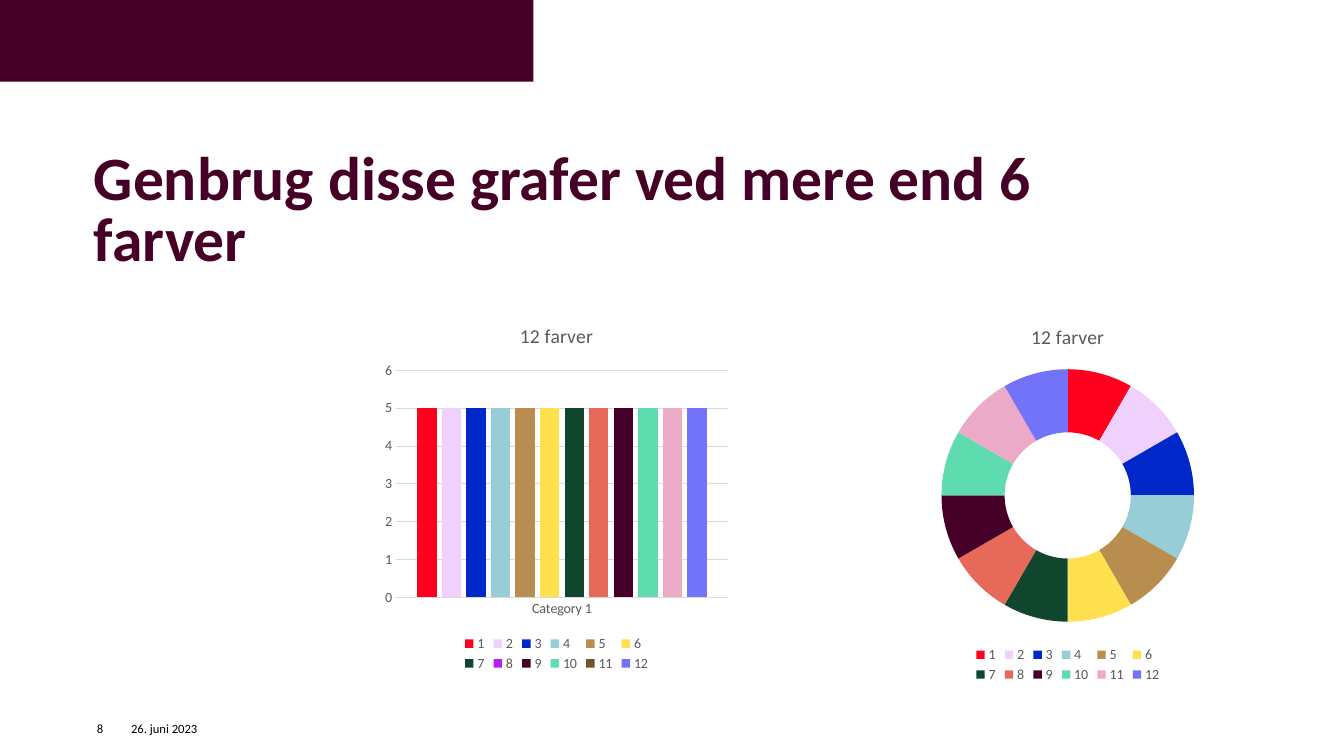
"""Build a slide with a column chart and a doughnut chart in twelve colours."""
from dataclasses import dataclass

from pptx import Presentation
from pptx.chart.data import CategoryChartData
from pptx.dml.color import RGBColor
from pptx.enum.chart import XL_CHART_TYPE, XL_LEGEND_POSITION, XL_TICK_MARK
from pptx.enum.shapes import MSO_SHAPE
from pptx.enum.text import MSO_ANCHOR
from pptx.util import Inches, Pt


@dataclass(frozen=True)
class Theme:
    font: str = "Calibri"
    plum: RGBColor = RGBColor.from_string("460028")
    black: RGBColor = RGBColor.from_string("000000")
    grey: RGBColor = RGBColor.from_string("595959")
    grid: RGBColor = RGBColor.from_string("D9D9D9")
    title_size: int = 44
    chart_title_size: int = 14
    chart_size: int = 10
    footer_size: int = 9
    palette: tuple = ("FF001E", "F0D0FD", "0028C8", "96CDD7", "B98C50", "FFE150",
                      "0F462D", "E6695A", "460028", "5FDCAF", "EBAAC8", "7373FA")


theme = Theme()
legend_colours = {7: "B81FF5", 10: "72542D"}


def add_text(left, top, width, height, text, size, colour, bold=False):
    """Add a text box without margins and return its paragraph."""
    box = slide.shapes.add_textbox(Inches(left), Inches(top), Inches(width), Inches(height))
    frame = box.text_frame
    frame.word_wrap = True
    frame.vertical_anchor = MSO_ANCHOR.TOP
    frame.margin_left = frame.margin_right = frame.margin_top = frame.margin_bottom = 0
    frame.text = text
    para = frame.paragraphs[0]
    for span in para.runs:
        span.font.name = theme.font
        span.font.size = Pt(size)
        span.font.bold = bold
        span.font.color.rgb = colour
    return para


def add_styled_chart(kind, left, height, data):
    """Add a chart with the shared title, legend and fonts."""
    chart = slide.shapes.add_chart(
        kind, Inches(left), Inches(3.04), Inches(3.54), Inches(height), data).chart
    chart.font.name = theme.font
    chart.font.size = Pt(theme.chart_size)
    chart.font.color.rgb = theme.grey
    chart.has_title = True
    chart.chart_title.include_in_layout = False
    chart.chart_title.text_frame.text = "12 farver"
    title_font = chart.chart_title.text_frame.paragraphs[0].runs[0].font
    title_font.name = theme.font
    title_font.size = Pt(theme.chart_title_size)
    title_font.bold = False
    title_font.color.rgb = theme.grey
    chart.has_legend = True
    chart.legend.position = XL_LEGEND_POSITION.BOTTOM
    chart.legend.include_in_layout = False
    return chart


deck = Presentation()
deck.slide_width, deck.slide_height = Inches(13.33), Inches(7.5)
slide = deck.slides.add_slide(deck.slide_layouts[6])

banner = slide.shapes.add_shape(MSO_SHAPE.RECTANGLE, 0, 0, Inches(5.29), Inches(0.81))
banner.shadow.inherit = False
banner.fill.solid()
banner.fill.fore_color.rgb = theme.plum
banner.line.fill.background()

heading = add_text(0.93, 1.5, 9.99, 1.31, "Genbrug disse grafer ved mere end 6 farver",
                   theme.title_size, theme.plum, bold=True)
heading.line_spacing = 0.83

numbers = [str(number) for number in range(1, len(theme.palette) + 1)]

column_data = CategoryChartData()
column_data.categories = ["Category 1"]
for number in numbers:
    column_data.add_series(number, [5])
column_chart = add_styled_chart(XL_CHART_TYPE.COLUMN_CLUSTERED, 3.75, 3.66, column_data)
columns = column_chart.plots[0]
columns.vary_by_categories = False
columns.gap_width = 219
columns.overlap = -27
for index, series in enumerate(columns.series):
    fill = series.format.fill
    fill.solid()
    fill.fore_color.rgb = RGBColor.from_string(legend_colours.get(index, theme.palette[index]))
    if index in legend_colours:
        point_fill = series.points[0].format.fill
        point_fill.solid()
        point_fill.fore_color.rgb = RGBColor.from_string(theme.palette[index])

category_axis, value_axis = column_chart.category_axis, column_chart.value_axis
for axis in (category_axis, value_axis):
    axis.major_tick_mark = axis.minor_tick_mark = XL_TICK_MARK.NONE
value_axis.minimum_scale, value_axis.maximum_scale, value_axis.major_unit = 0, 6, 1
value_axis.has_major_gridlines = True
value_axis.format.line.fill.background()
for line in (category_axis.format.line, value_axis.major_gridlines.format.line):
    line.color.rgb = theme.grid
    line.width = Pt(0.75)

ring_data = CategoryChartData()
ring_data.categories = numbers
ring_data.add_series("Series 1", [8] * len(numbers))
ring_chart = add_styled_chart(XL_CHART_TYPE.DOUGHNUT, 8.82, 3.77, ring_data)
ring = ring_chart.plots[0]
ring.vary_by_categories = True
for index, colour in enumerate(theme.palette):
    slice_format = ring.series[0].points[index].format
    slice_format.fill.solid()
    slice_format.fill.fore_color.rgb = RGBColor.from_string(colour)
    slice_format.line.fill.background()

add_text(1.3, 7.15, 1.36, 0.2, "26. juni 2023", theme.footer_size, theme.black)
add_text(0.96, 7.15, 0.28, 0.2, "8", theme.footer_size, theme.black)

deck.save("out.pptx")
